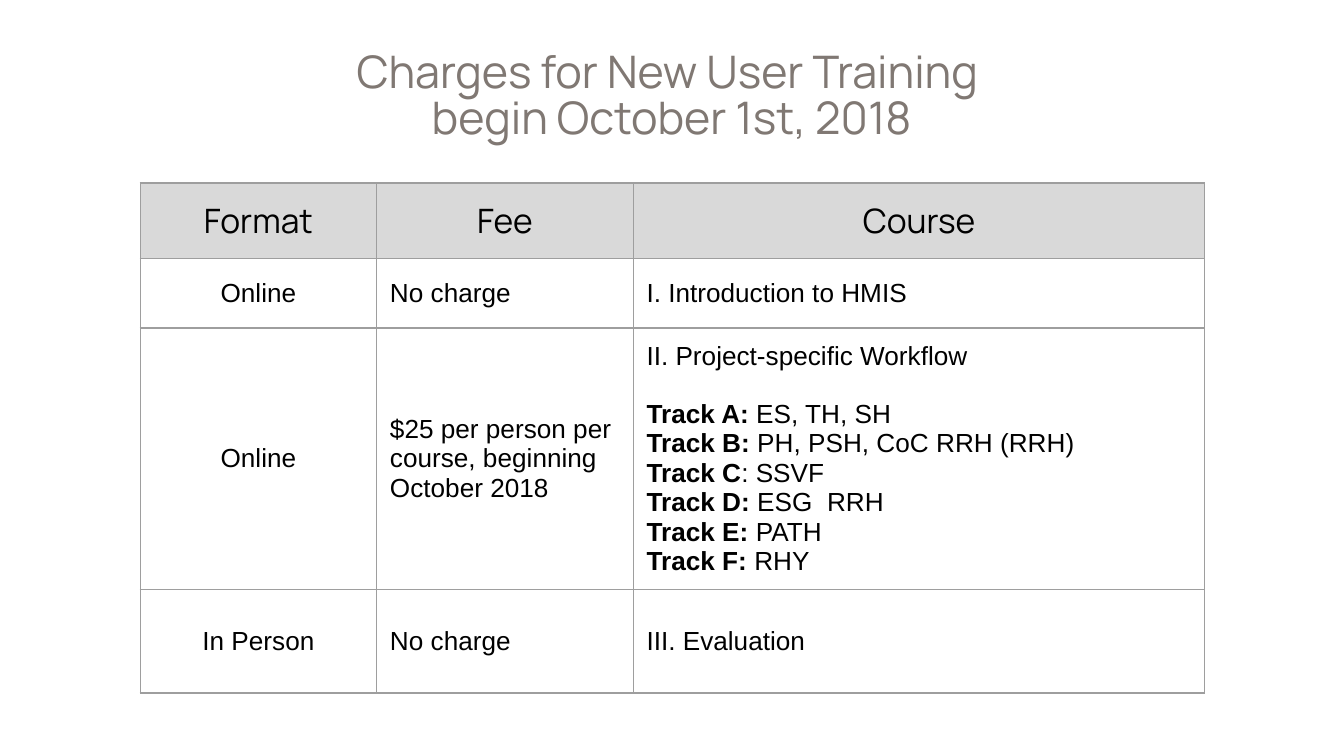
from lxml import etree
from pptx import Presentation
from pptx import util as u
from pptx.dml.color import RGBColor
from pptx.enum import text
from pptx.oxml import ns

TITLE = "Charges for New User Training \vbegin October 1st, 2018"
HEADERS = ["Format", "Fee", "Course"]
TRACKS = [
    ("Track A:", " ES, TH, SH"),
    ("Track B:", " PH, PSH, CoC RRH (RRH)"),
    ("Track C", ": SSVF"),
    ("Track D:", " ESG  RRH"),
    ("Track E:", " PATH"),
    ("Track F:", " RHY"),
]
ROWS = [
    ("Online", "No charge", "I. Introduction to HMIS"),
    ("Online", "$25 per person per course, beginning October 2018",
     "II. Project-specific Workflow"),
    ("In Person", "No charge", "III. Evaluation"),
]
TRACKS_ROW = 2
COL_WIDTHS = [4.47, 4.85, 10.8]
ROW_HEIGHTS = [1.42, 1.32, 4.94, 1.96]
COLORS = {"title": "807873", "text": "000000", "header": "D9D9D9", "border": "9E9E9E"}
INSET = u.Cm(0.25)


def style(p, font, size, color, align):
    p.alignment = align
    p.font.name = font
    p.font.size = u.Pt(size)
    p.font.color.rgb = RGBColor.from_string(COLORS[color])


def add_borders(cell):
    tc_pr = cell._tc.get_or_add_tcPr()
    for i, side in enumerate(("lnL", "lnR", "lnT", "lnB")):
        ln = etree.Element(ns.qn("a:" + side), w=str(u.Pt(0.75)))
        fill = etree.SubElement(ln, ns.qn("a:solidFill"))
        etree.SubElement(fill, ns.qn("a:srgbClr"), val=COLORS["border"])
        tc_pr.insert(i, ln)


def add_tracks(tf):
    for i, (label, projects) in enumerate(TRACKS):
        p = tf.add_paragraph()
        if i == 0:
            p.space_before = u.Pt(15.6)
        r = p.add_run()
        r.text = label
        r.font.bold = True
        p.add_run().text = projects


def add_title(s):
    sp = s.shapes.title
    sp.left, sp.top, sp.width, sp.height = u.Cm(0.86), u.Cm(0.61), u.Cm(23.67), u.Cm(1.6)
    tf = sp.text_frame
    tf.text = TITLE
    tf.word_wrap = True
    tf.auto_size = text.MSO_AUTO_SIZE.NONE
    tf.vertical_anchor = text.MSO_ANCHOR.TOP
    tf.margin_left = tf.margin_right = tf.margin_bottom = INSET
    tf.margin_top = u.Cm(0.35)
    p = tf.paragraphs[0]
    p.line_spacing = 0.87
    style(p, "Manrope", 24, "title", text.PP_ALIGN.CENTER)


def add_fee_table(s):
    data = [HEADERS, *ROWS]
    table = s.shapes.add_table(
        len(data), len(HEADERS), u.Cm(2.65), u.Cm(3.46),
        u.Cm(sum(COL_WIDTHS)), u.Cm(sum(ROW_HEIGHTS))).table
    table.horz_banding = False
    for column, width in zip(table.columns, COL_WIDTHS):
        column.width = u.Cm(width)
    for row, height in zip(table.rows, ROW_HEIGHTS):
        row.height = u.Cm(height)

    for i, values in enumerate(data):
        for j, value in enumerate(values):
            cell = table.cell(i, j)
            cell.text = value
            cell.vertical_anchor = text.MSO_ANCHOR.MIDDLE
            cell.margin_left = cell.margin_right = INSET
            cell.margin_top = cell.margin_bottom = INSET
            if i == 0:
                cell.fill.solid()
                cell.fill.fore_color.rgb = RGBColor.from_string(COLORS["header"])
            else:
                cell.fill.background()
            if (i, j) == (TRACKS_ROW, 2):
                add_tracks(cell.text_frame)
            font, size = ("Manrope", 18) if i == 0 else ("Arial", 14)
            centred = i == 0 or j == 0
            align = text.PP_ALIGN.CENTER if centred else text.PP_ALIGN.LEFT
            for p in cell.text_frame.paragraphs:
                style(p, font, size, "text", align)
                if i == 0:
                    p.font.bold = False
            add_borders(cell)
    table.first_row = False


def main():
    prs = Presentation()
    prs.slide_width, prs.slide_height = u.Cm(25.4), u.Cm(14.29)
    s = prs.slides.add_slide(prs.slide_layouts[5])
    add_title(s)
    add_fee_table(s)
    prs.save("out.pptx")


if __name__ == "__main__":
    main()
